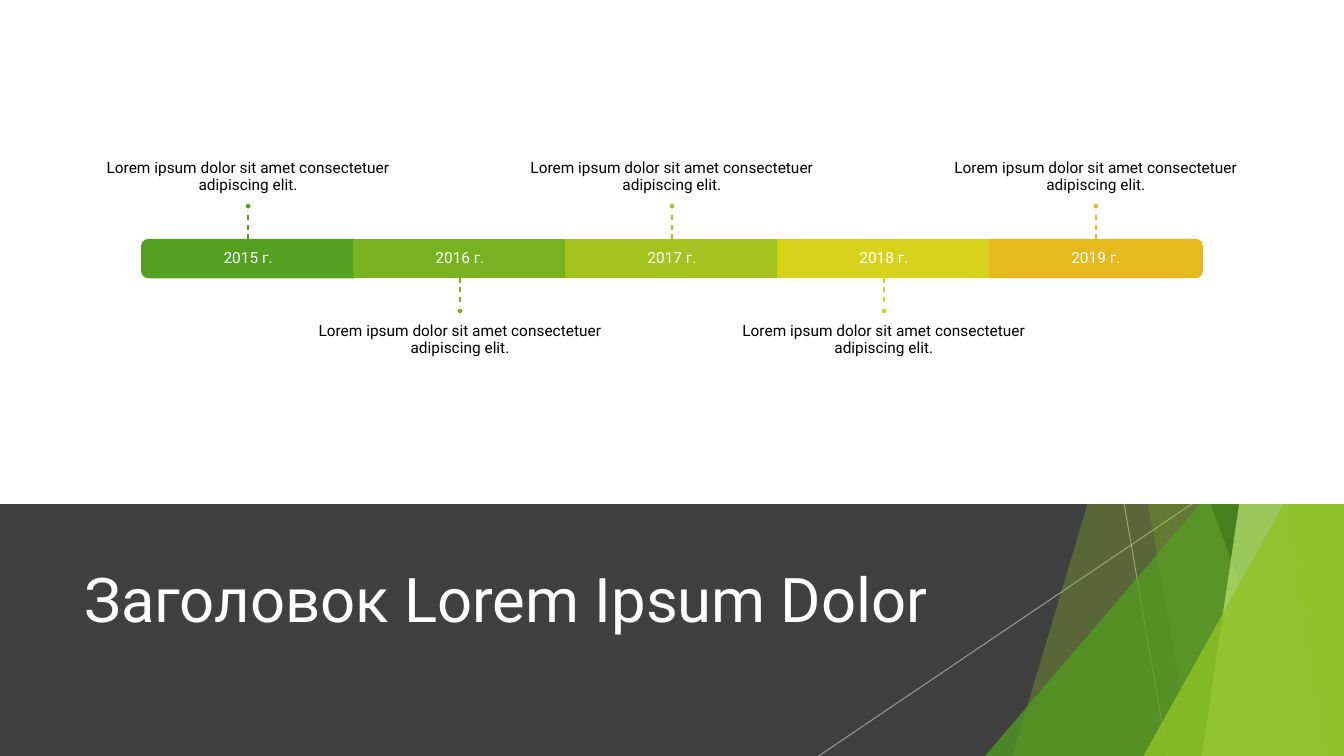
from dataclasses import dataclass

from pptx import Presentation
from pptx import util as u
from pptx.dml.color import RGBColor
from pptx.enum import dml, shapes, text
from pptx.oxml import ns
from lxml import etree

Inches, Pt = u.Inches, u.Pt


@dataclass(frozen=True)
class Theme:
    font: str = "Roboto"
    title_size: int = 44
    text_size: int = 11
    white: str = "FFFFFF"
    black: str = "000000"
    dark: str = "404040"
    ray: str = "BFBFBF"
    lime: str = "90C226"
    green: str = "54A021"
    forest: str = "3F7819"
    pale: str = "C0E474"
    steps: tuple = ("54A021", "79B220", "A5C41F", "D7D31D", "E6B91E")


THEME = Theme()
WIDTH, HEIGHT, PANEL_HEIGHT = 13.33, 7.5, 5
BAR_LEFT, BAR_TOP, BAR_HEIGHT = 1.41, 2.38, 0.37
STEP = (WIDTH - 2 * BAR_LEFT) / len(THEME.steps)
STEM, DOT = 0.3, 0.07
NOTE_WIDTH, NOTE_HEIGHT = 3.51, 1.3
NOTE = "Lorem ipsum dolor sit amet consectetuer adipiscing elit."
FIRST_YEAR = 2015
RAYS = [(11.15, 11.58), (11.82, 8.12)]
FACETS = [
    ("band", 12.28, 10.04, THEME.lime, 30),
    ("band", 10.5, 11.83, THEME.lime, 20),
    ("triangle", 9.77, 3.33, THEME.green, 72),
    ("band", 10.21, 12.91, THEME.forest, 70),
    ("band", 13.03, 11.92, THEME.pale, 70),
    ("band", 11.96, 13.18, THEME.lime, 65),
    ("triangle", 11.34, 3.93, THEME.lime, 80),
]


def apply(target, values):
    for name, value in values.items():
        setattr(target, name, value)


def set_opacity(shape, percent):
    for color in shape.element.spPr.iter(ns.qn("a:srgbClr")):
        etree.SubElement(color, ns.qn("a:alpha")).set("val", str(percent * 1000))


def paint(shape, fill, line=None):
    shape.shadow.inherit = False
    shape.fill.solid()
    shape.fill.fore_color.rgb = RGBColor.from_string(fill)
    if line:
        shape.line.color.rgb = RGBColor.from_string(line)
        shape.line.width = Pt(1.5)
    else:
        shape.line.fill.background()


def add_block(slide, kind, box, fill, line=None):
    shape = slide.shapes.add_shape(kind, *map(Inches, box))
    paint(shape, fill, line)
    return shape


def add_line(slide, start, end, color, width):
    connector = slide.shapes.add_connector(
        shapes.MSO_CONNECTOR.STRAIGHT, *map(Inches, (*start, *end)))
    connector.line.color.rgb = RGBColor.from_string(color)
    connector.line.width = Pt(width)
    etree.SubElement(connector.element.spPr, ns.qn("a:effectLst"))
    return connector


def write(shape, content, frame_format, paragraph_format, size, color):
    frame = shape.text_frame
    frame.text = content
    apply(frame, {"word_wrap": True, "auto_size": text.MSO_AUTO_SIZE.NONE, **frame_format})
    paragraph = frame.paragraphs[0]
    apply(paragraph, paragraph_format)
    font = paragraph.runs[0].font
    apply(font, {"name": THEME.font, "size": Pt(size)})
    font.color.rgb = RGBColor.from_string(color)


def add_label(slide, box, content, color, anchor, margins):
    label = slide.shapes.add_textbox(*map(Inches, box))
    sides = ("margin_left", "margin_top", "margin_right", "margin_bottom")
    frame_format = {"vertical_anchor": anchor, **dict(zip(sides, map(Inches, margins)))}
    paragraph_format = {"alignment": text.PP_ALIGN.CENTER, "line_spacing": 0.9}
    write(label, content, frame_format, paragraph_format, THEME.text_size, color)


def add_band(slide, top_x, bottom_x, color):
    corners = [(top_x, 0), (WIDTH, 0), (WIDTH, HEIGHT), (bottom_x, HEIGHT)]
    points = [(Inches(x), Inches(y)) for x, y in corners]
    builder = slide.shapes.build_freeform(*points[0])
    builder.add_line_segments(points[1:], close=True)
    band = builder.convert_to_shape()
    paint(band, color)
    return band


def add_triangle(slide, left, top, color):
    triangle = add_block(slide, shapes.MSO_SHAPE.ISOSCELES_TRIANGLE,
                         (left, top, WIDTH - left, HEIGHT - top), color)
    triangle.adjustments[0] = 1
    return triangle


def add_facets(slide):
    for top_x, bottom_x in RAYS:
        ray = add_line(slide, (top_x, PANEL_HEIGHT), (bottom_x, HEIGHT), THEME.ray, 0.75)
        set_opacity(ray, 70)
    builders = {"band": add_band, "triangle": add_triangle}
    for kind, first, second, color, opacity in FACETS:
        set_opacity(builders[kind](slide, first, second, color), opacity)


def add_title(slide, content):
    title = slide.shapes.title
    slide.shapes.element.append(title.element)
    apply(title, {"left": Inches(0.74), "top": Inches(5.21),
                  "width": Inches(9.4), "height": Inches(1.44)})
    write(title, content, {"vertical_anchor": text.MSO_ANCHOR.MIDDLE},
          {"alignment": text.PP_ALIGN.LEFT}, THEME.title_size, THEME.white)


def add_bar(slide, center, color, rotation):
    if not rotation:
        box = (center - STEP / 2, BAR_TOP, STEP, BAR_HEIGHT)
        return add_block(slide, shapes.MSO_SHAPE.RECTANGLE, box, color, color)
    box = (center - BAR_HEIGHT / 2, BAR_TOP + (BAR_HEIGHT - STEP) / 2, BAR_HEIGHT, STEP)
    bar = add_block(slide, shapes.MSO_SHAPE.ROUND_2_SAME_RECTANGLE, box, color, color)
    bar.rotation = rotation
    return bar


def add_milestone(slide, index, color):
    center = BAR_LEFT + (index + 0.5) * STEP
    bar = add_bar(slide, center, color, {0: 270, len(THEME.steps) - 1: 90}.get(index, 0))
    add_label(slide, (center - STEP / 2, BAR_TOP, STEP, BAR_HEIGHT),
              f"{FIRST_YEAR + index} г.", THEME.white, text.MSO_ANCHOR.MIDDLE, [0.09] * 4)

    above = index % 2 == 0
    if above:
        edge, site = BAR_TOP, 0
        tip = edge - STEM
        dot_top = tip - DOT
        note_top = dot_top - NOTE_HEIGHT
        anchor, margins = text.MSO_ANCHOR.BOTTOM, (0, 0, 0, 0.09)
    else:
        edge, site = BAR_TOP + BAR_HEIGHT, 2
        tip = dot_top = edge + STEM
        note_top = dot_top + DOT
        anchor, margins = text.MSO_ANCHOR.TOP, (0, 0.09, 0, 0)

    add_label(slide, (center - NOTE_WIDTH / 2, note_top, NOTE_WIDTH, NOTE_HEIGHT),
              NOTE, THEME.black, anchor, margins)
    stem = add_line(slide, (center, edge), (center, tip), color, 1)
    stem.line.dash_style = dml.MSO_LINE.DASH
    if not bar.rotation:
        stem.begin_connect(bar, site)
    add_block(slide, shapes.MSO_SHAPE.OVAL, (center - DOT / 2, dot_top, DOT, DOT),
              color, THEME.white)


def main():
    presentation = Presentation()
    apply(presentation, {"slide_width": Inches(WIDTH), "slide_height": Inches(HEIGHT)})
    slide = presentation.slides.add_slide(presentation.slide_layouts[5])
    add_block(slide, shapes.MSO_SHAPE.RECTANGLE,
              (0, PANEL_HEIGHT, WIDTH, HEIGHT - PANEL_HEIGHT), THEME.dark)
    add_facets(slide)
    add_title(slide, "Заголовок Lorem Ipsum Dolor")
    add_block(slide, shapes.MSO_SHAPE.RECTANGLE, (0, 0, WIDTH, PANEL_HEIGHT), THEME.white)
    for index, color in enumerate(THEME.steps):
        add_milestone(slide, index, color)
    presentation.save("out.pptx")


if __name__ == "__main__":
    main()
